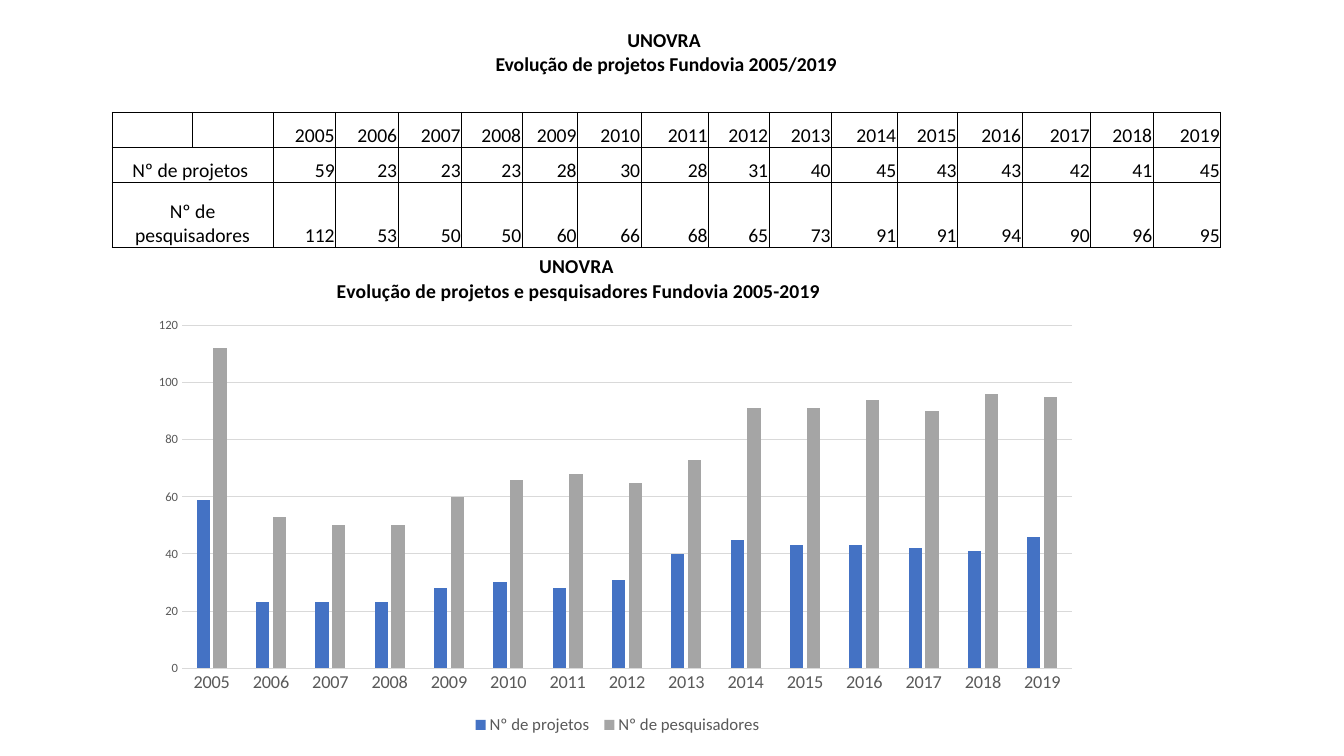
from lxml.etree import SubElement, fromstring
from pptx import Presentation
from pptx.chart.data import CategoryChartData
from pptx.dml.color import RGBColor
from pptx.enum.chart import XL_CHART_TYPE, XL_LEGEND_POSITION, XL_TICK_MARK
from pptx.enum.text import MSO_ANCHOR, PP_ALIGN
from pptx.oxml.ns import nsdecls, qn
from pptx.util import Inches, Pt

# Content
TABLE_TITLE = ["UNOVRA ", "Evolução de projetos Fundovia 2005/2019"]
CHART_TITLE = ["UNOVRA ", "Evolução de projetos e pesquisadores Fundovia 2005-2019"]
YEARS = [str(year) for year in range(2005, 2020)]
PROJECTS = [59, 23, 23, 23, 28, 30, 28, 31, 40, 45, 43, 43, 42, 41, 45]
RESEARCHERS = [112, 53, 50, 50, 60, 66, 68, 65, 73, 91, 91, 94, 90, 96, 95]
TABLE_ROWS = [
    ("", YEARS),
    ("Nº de projetos ", PROJECTS),
    ("Nº de pesquisadores", RESEARCHERS),
]
BLACK = RGBColor(0x00, 0x00, 0x00)
GRAY = RGBColor(0x59, 0x59, 0x59)
LIGHT = RGBColor(0xD9, 0xD9, 0xD9)
BLUE = RGBColor(0x44, 0x72, 0xC4)
SILVER = RGBColor(0xA5, 0xA5, 0xA5)
SERIES = [
    ("Nº de projetos ", PROJECTS[:-1] + [46], BLUE),
    ("Nº de pesquisadores", RESEARCHERS, SILVER),
]

# Layout
COL_WIDTHS = [0.8, 0.8, 0.62, 0.62, 0.63, 0.6, 0.55, 0.63, 0.67,
              0.6, 0.62, 0.65, 0.6, 0.64, 0.68, 0.62, 0.67]
ROW_HEIGHTS = [0.48, 0.35, 0.35, 0.35, 0.64]
TABLE_LEFT, TABLE_TOP = 1.11, 0.28
CHART_BOX = (1.43, 2.33, 9.39, 5)
TITLE_LAYOUT = {"xMode": "edge", "yMode": "edge", "x": 0.2, "y": 0.03}
PLOT_LAYOUT = {"layoutTarget": "inner", "xMode": "edge", "yMode": "edge",
               "x": 0.04, "y": 0.18, "w": 0.94, "h": 0.68}
PLAIN_TABLE = "{2D5ABB26-0587-4C30-8999-92F81FD0307C}"
CELL_FORMAT = {
    "margin_left": Inches(0.01), "margin_right": Inches(0.01),
    "margin_top": Inches(0.01), "margin_bottom": 0,
    "vertical_anchor": MSO_ANCHOR.BOTTOM,
}


def set_font(font, size, color, bold=False):
    formats = {"name": "Calibri", "size": Pt(size), "bold": bold}
    for key, value in formats.items():
        setattr(font, key, value)
    font.color.rgb = color


def set_lines(tf, lines, align, bold=False):
    for i, line in enumerate(lines):
        p = tf.paragraphs[0] if i == 0 else tf.add_paragraph()
        p.alignment = align
        r = p.add_run()
        r.text = line
        set_font(r.font, 14, BLACK, bold)


def set_borders(cell, sides):
    tcPr = cell._tc.get_or_add_tcPr()
    for i, side in enumerate("LRTB"):
        if side in sides:
            paint = f'<a:solidFill><a:srgbClr val="{BLACK}"/></a:solidFill>'
        else:
            paint = "<a:noFill/>"
        tcPr.insert(i, fromstring(
            f'<a:ln{side} {nsdecls("a")} w="6350">{paint}</a:ln{side}>'))


def set_layout(parent, index, values):
    for old in parent.findall(qn("c:layout")):
        parent.remove(old)
    layout = SubElement(parent, qn("c:layout"))
    manual = SubElement(layout, qn("c:manualLayout"))
    for key, value in values.items():
        SubElement(manual, qn(f"c:{key}")).set("val", str(value))
    parent.insert(index, layout)


def add_columns(slide):
    data = CategoryChartData()
    data.categories = YEARS
    for name, values, _ in SERIES:
        data.add_series(name, values)
    chart = slide.shapes.add_chart(
        XL_CHART_TYPE.COLUMN_CLUSTERED, *map(Inches, CHART_BOX), data).chart
    set_font(chart.font, 10, BLACK)

    # Title and legend
    set_lines(chart.chart_title.text_frame, CHART_TITLE, PP_ALIGN.CENTER, True)
    set_layout(chart.chart_title._element, 1, TITLE_LAYOUT)
    chart.has_legend = True
    chart.legend.position = XL_LEGEND_POSITION.BOTTOM
    chart.legend.include_in_layout = False
    set_font(chart.legend.font, 12, GRAY)

    # Columns
    plot = chart.plots[0]
    for key, value in {"gap_width": 219, "overlap": -27,
                       "vary_by_categories": False}.items():
        setattr(plot, key, value)
    for series, (_, _, color) in zip(plot.series, SERIES):
        series.format.fill.solid()
        series.format.fill.fore_color.rgb = color
    set_layout(chart._chartSpace.chart.plotArea, 0, PLOT_LAYOUT)

    # Axes
    for axis, size in ((chart.category_axis, 13), (chart.value_axis, 9)):
        axis.major_tick_mark = axis.minor_tick_mark = XL_TICK_MARK.NONE
        set_font(axis.tick_labels.font, size, GRAY)
    chart.value_axis.maximum_scale = 120
    chart.value_axis.minimum_scale = 0
    chart.value_axis.major_unit = 20
    chart.value_axis.format.line.fill.background()
    for line in (chart.category_axis.format.line,
                 chart.value_axis.major_gridlines.format.line):
        line.color.rgb = LIGHT
        line.width = Pt(0.75)


def add_figures(slide):
    frame = slide.shapes.add_table(
        len(ROW_HEIGHTS), len(COL_WIDTHS), Inches(TABLE_LEFT), Inches(TABLE_TOP),
        Inches(sum(COL_WIDTHS)), Inches(sum(ROW_HEIGHTS)))
    table = frame.table
    table.first_row = table.horz_banding = False
    table._tbl.tblPr.find(qn("a:tableStyleId")).text = PLAIN_TABLE
    for column, width in zip(table.columns, COL_WIDTHS):
        column.width = Inches(width)
    for row, height in zip(table.rows, ROW_HEIGHTS):
        row.height = Inches(height)

    # Cell formats: title row bare, spacer row closed below, grid for the rest
    for i, row in enumerate(table.rows):
        for cell in row.cells:
            for key, value in CELL_FORMAT.items():
                setattr(cell, key, value)
            cell.fill.background()
            set_borders(cell, ("", "B", "LRTB", "LRTB", "LRTB")[i])
            cell.text_frame.paragraphs[0]._p.get_or_add_endParaRPr().set("sz", "1400")

    # Text
    table.cell(0, 0).merge(table.cell(0, len(COL_WIDTHS) - 1))
    set_lines(table.cell(0, 0).text_frame, TABLE_TITLE, PP_ALIGN.CENTER, True)
    for i, (label, values) in enumerate(TABLE_ROWS, start=2):
        if label:
            table.cell(i, 0).merge(table.cell(i, 1))
            set_lines(table.cell(i, 0).text_frame, [label], PP_ALIGN.CENTER)
        for j, value in enumerate(values, start=2):
            set_lines(table.cell(i, j).text_frame, [str(value)], PP_ALIGN.RIGHT)


def main():
    prs = Presentation()
    prs.slide_width, prs.slide_height = Inches(13.33), Inches(7.5)
    slide = prs.slides.add_slide(prs.slide_layouts[6])
    add_columns(slide)
    add_figures(slide)
    prs.save("out.pptx")


if __name__ == "__main__":
    main()
